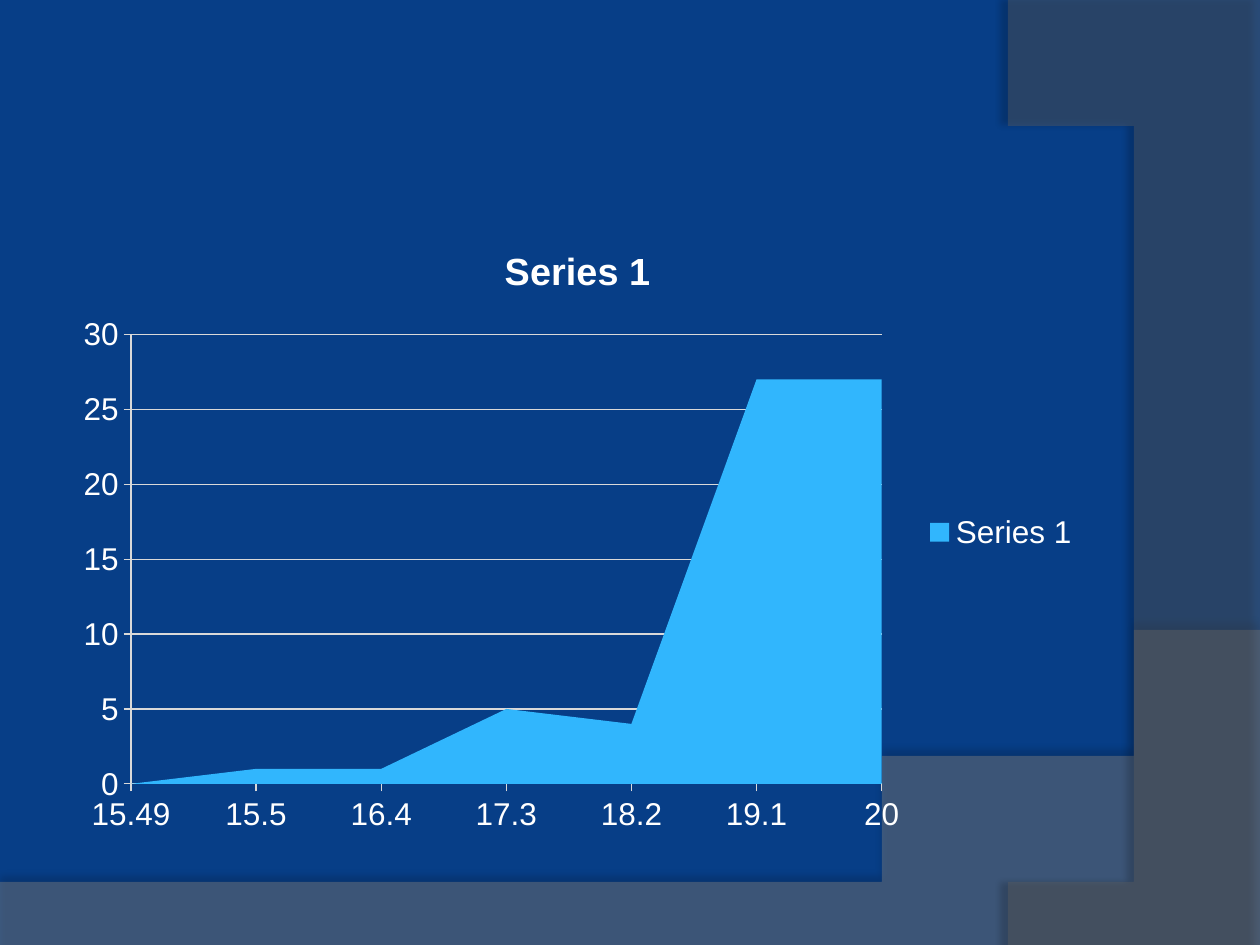
import pptx
import pptx.chart.data
import pptx.dml.color
import pptx.enum.chart
import pptx.oxml
import pptx.util
from pptx.util import Inches

# Content
SERIES_NAME = "Series 1"
POINTS = [("15.49", 0), ("15.5", 1), ("16.4", 1), ("17.3", 5),
          ("18.2", 4), ("19.1", 27), ("20", 27)]
BACKGROUND, AREA, TEXT, LINES = "073E87", "31B6FD", "FFFFFF", "D9D9D9"

# Each band: straight corners, then a Bezier curve from the last corner
BANDS = [
    {"corners": [(0, 7.05), (0, 7.51), (10, 7.51), (10, 5.2)],
     "curve": [(5.59, 7.29), (3.91, 7.19), (0, 7.05)],
     "color": "7F7F7F", "opacity": 45,
     "shadow": {"opacity": 35, "blur": 4, "distance": 3.5, "angle": 270}},
    {"corners": [(10, 0.02), (10, 7.5), (8.21, 7.5)],
     "curve": [(9.35, 6.19), (10.18, 3), (8, 0)],
     "color": "5E5E5E", "opacity": 40,
     "shadow": {"opacity": 45, "blur": 4, "distance": 4, "angle": 180}},
]
CURVE_STEPS = 60
NS = 'xmlns:a="http://schemas.openxmlformats.org/drawingml/2006/main"'


def rgb(color):
    return pptx.dml.color.RGBColor.from_string(color)


def paint(fill, color):
    fill.solid()
    fill.fore_color.rgb = rgb(color)


def style_font(font, size, bold=False):
    font.name = "Arial"
    font.size = pptx.util.Pt(size)
    font.bold = bold
    font.color.rgb = rgb(TEXT)


def bezier(p0, p1, p2, p3):
    for step in range(1, CURVE_STEPS + 1):
        t = step / CURVE_STEPS
        weights = ((1 - t) ** 3, 3 * t * (1 - t) ** 2, 3 * t * t * (1 - t), t ** 3)
        yield tuple(sum(w * p[axis] for w, p in zip(weights, (p0, p1, p2, p3)))
                    for axis in (0, 1))


def add_band(slide, band):
    corners = band["corners"]
    outline = corners + list(bezier(corners[-1], *band["curve"]))
    builder = slide.shapes.build_freeform(*outline[0], scale=Inches(1))
    builder.add_line_segments(outline[1:], close=True)
    shape = builder.convert_to_shape()
    paint(shape.fill, band["color"])
    shape.line.fill.background()
    # Transparency and shadow
    color = shape._element.spPr.find(".//{*}srgbClr")
    color.append(pptx.oxml.parse_xml(
        f'<a:alpha {NS} val="{band["opacity"] * 1000}"/>'))
    shadow = band["shadow"]
    shape._element.spPr.append(pptx.oxml.parse_xml(
        f'<a:effectLst {NS}><a:outerShdw blurRad="{pptx.util.Pt(shadow["blur"])}"'
        f' dist="{pptx.util.Pt(shadow["distance"])}" dir="{shadow["angle"] * 60000}"'
        ' algn="ctr" rotWithShape="0"><a:srgbClr val="000000">'
        f'<a:alpha val="{shadow["opacity"] * 1000}"/>'
        '</a:srgbClr></a:outerShdw></a:effectLst>'))


def add_area_chart(slide):
    data = pptx.chart.data.CategoryChartData()
    data.categories = [category for category, _ in POINTS]
    data.add_series(SERIES_NAME, [value for _, value in POINTS])
    chart = slide.shapes.add_chart(
        pptx.enum.chart.XL_CHART_TYPE.AREA_STACKED,
        Inches(0.5), Inches(1.75), Inches(8.17), Inches(4.95), data).chart
    style_font(chart.font, 18)
    paint(chart.plots[0].series[0].format.fill, AREA)

    # Title and legend
    chart.has_title = True
    title = chart.chart_title.text_frame
    title.text = SERIES_NAME
    style_font(title.paragraphs[0].font, 21.6, bold=True)
    chart.has_legend = True
    chart.legend.position = pptx.enum.chart.XL_LEGEND_POSITION.RIGHT
    chart.legend.include_in_layout = False

    # Axes
    for axis in (chart.category_axis, chart.value_axis):
        axis.major_tick_mark = pptx.enum.chart.XL_TICK_MARK.OUTSIDE
        axis.minor_tick_mark = pptx.enum.chart.XL_TICK_MARK.NONE
        axis.format.line.color.rgb = rgb(LINES)
    chart.category_axis.has_major_gridlines = False
    chart.value_axis.has_major_gridlines = True
    chart.value_axis.major_gridlines.format.line.color.rgb = rgb(LINES)
    chart.value_axis.minimum_scale = 0
    chart.value_axis.maximum_scale = 30
    chart.value_axis.major_unit = 5
    for crossing in chart._chartSpace.iter("{*}crossBetween"):
        crossing.set("val", "midCat")


def main():
    deck = pptx.Presentation()
    deck.slide_width, deck.slide_height = Inches(10), Inches(7.5)
    slide = deck.slides.add_slide(deck.slide_layouts[6])
    paint(slide.background.fill, BACKGROUND)
    for band in BANDS:
        add_band(slide, band)
    add_area_chart(slide)
    deck.save("out.pptx")


if __name__ == "__main__":
    main()
